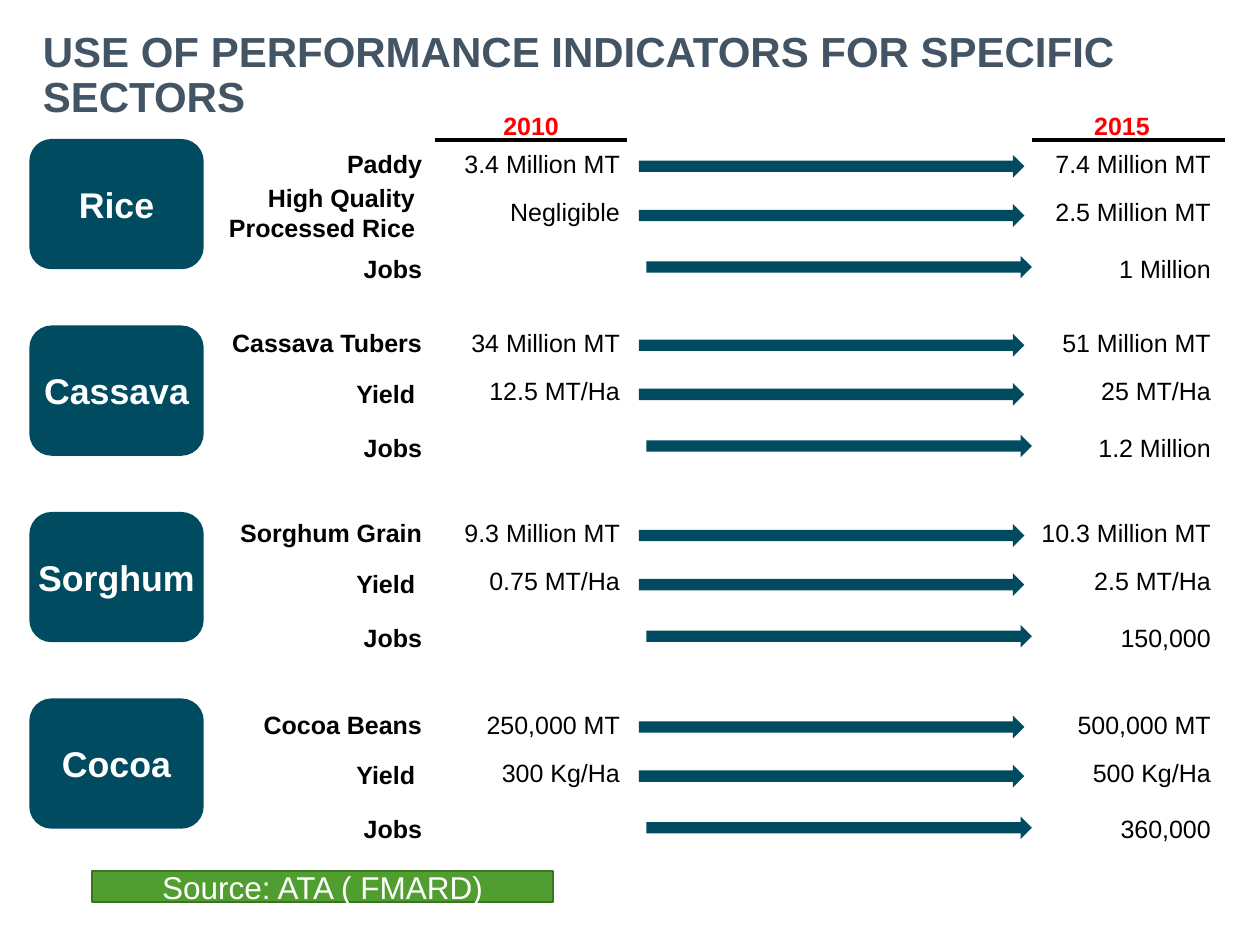
from pptx import Presentation
from pptx.dml.color import RGBColor
from pptx.enum.shapes import MSO_CONNECTOR, MSO_SHAPE
from pptx.enum.text import MSO_ANCHOR, MSO_AUTO_SIZE, PP_ALIGN
from pptx.oxml.xmlchemy import OxmlElement
from pptx.util import Inches, Pt

TEAL, WHITE, BLACK = "004B5F", "FFFFFF", "000000"


def write(shape, text, size, color, bold=False, align=PP_ALIGN.CENTER, inset=None, **form):
    """Put text in a shape; form holds text frame settings."""
    frame = shape.text_frame
    frame.text = text
    if inset is not None:
        for side in ("left", "top", "right", "bottom"):
            setattr(frame, "margin_" + side, Inches(inset))
    for key, val in form.items():
        setattr(frame, key, val)
    look = {"name": "Arial", "size": Pt(size), "bold": bold}
    for para in frame.paragraphs:
        para.alignment = align
        for run in para.runs:
            for key, val in look.items():
                setattr(run.font, key, val)
            run.font.color.rgb = RGBColor.from_string(color)


def draw(kind, left, top, width, height, fill, line=None):
    """Add a filled preset shape without shadow."""
    shape = slide.shapes.add_shape(kind, Inches(left), Inches(top), Inches(width), Inches(height))
    shape.shadow.inherit = False
    shape.fill.solid()
    shape.fill.fore_color.rgb = RGBColor.from_string(fill)
    if line:
        shape.line.color.rgb = RGBColor.from_string(line)
        shape.line.width = Pt(1)
    else:
        shape.line.fill.background()
    return shape


deck = Presentation()
deck.slide_width, deck.slide_height = Inches(10), Inches(7.5)
slide = deck.slides.add_slide(deck.slide_layouts[5])

title = slide.shapes.title
spot = {"left": 0.24, "top": 0.34, "width": 9.78, "height": 0.53}
for key, val in spot.items():
    setattr(title, key, Inches(val))
write(title, "USE OF PERFORMANCE INDICATORS FOR SPECIFIC SECTORS", 24, "435464", True,
      PP_ALIGN.LEFT, vertical_anchor=MSO_ANCHOR.MIDDLE, word_wrap=True,
      auto_size=MSO_AUTO_SIZE.NONE)
title.text_frame.paragraphs[0].line_spacing = 0.9

# Unwrapped frames keep each text centred on its box
fit = {"inset": 0, "word_wrap": False, "auto_size": MSO_AUTO_SIZE.SHAPE_TO_FIT_TEXT}

# Year heads with their rules
for year, left, rule in (("2010", 3.72, 3.45), ("2015", 8.41, 8.19)):
    box = slide.shapes.add_textbox(Inches(left), Inches(0.88), Inches(0.99), Inches(0.25))
    write(box, year, 14.3, "FF0000", True, **fit)
    line = slide.shapes.add_connector(MSO_CONNECTOR.STRAIGHT, Inches(rule), Inches(1.11),
                                      Inches(rule + 1.53), Inches(1.11))
    line.line.color.rgb = RGBColor.from_string(BLACK)
    line.line.width = Pt(2.25)
    line._element.spPr.append(OxmlElement("a:effectLst"))

# Sector, top of its rows, then label, label width, 2010 value, 2015 value
sectors = [
    ("Rice", 1.18, [("Paddy", 0.62, "3.4 Million MT", "7.4 Million MT"),
                    ("High Quality \nProcessed Rice ", 1.67, "Negligible", "2.5 Million MT"),
                    ("Jobs", 0.57, "", "1 Million")]),
    ("Cassava", 2.6, [("Cassava Tubers", 1.73, "34 Million MT", "51 Million MT"),
                      ("Yield ", 0.61, "12.5 MT/Ha", "25 MT/Ha"),
                      ("Jobs", 0.57, "", "1.2 Million")]),
    ("Sorghum", 4.11, [("Sorghum Grain", 1.49, "9.3 Million MT", "10.3 Million MT"),
                       ("Yield ", 0.61, "0.75 MT/Ha", "2.5 MT/Ha"),
                       ("Jobs", 0.57, "", "150,000")]),
    ("Cocoa", 5.63, [("Cocoa Beans", 1.33, "250,000 MT", "500,000 MT"),
                     ("Yield ", 0.61, "300 Kg/Ha", "500 Kg/Ha"),
                     ("Jobs", 0.57, "", "360,000")]),
]
# Per row: drop of label, value and arrow below the top, and arrow left
steps = [(0, 0, 0.05, 5.07), (0.4, 0.38, 0.44, 5.07), (0.83, 0.83, 0.85, 5.13)]

for i, (name, top, rows) in enumerate(sectors):
    card = draw(MSO_SHAPE.ROUNDED_RECTANGLE, 0.24, 1.11 + 1.48 * i, 1.37, 1.02, TEAL, TEAL)
    write(card, name, 20.4, WHITE, True, word_wrap=False, vertical_anchor=MSO_ANCHOR.MIDDLE)
    for (label, wide, old, new), (drop, fall, dip, start) in zip(rows, steps):
        tall = 0.25
        if "\n" in label:
            drop, tall = 0.27, 0.48
        cells = [(label, 3.35 - wide, drop, wide, tall, True),
                 (old, 3.5, fall, 1.42, 0.25, False),
                 (new, 8.19, fall, 1.42, 0.25, False)]
        for text, left, down, width, height, bold in cells:
            if text:
                box = slide.shapes.add_textbox(Inches(left), Inches(top + down),
                                               Inches(width), Inches(height))
                write(box, text, 14.3, BLACK, bold, PP_ALIGN.RIGHT, **fit)
        draw(MSO_SHAPE.RIGHT_ARROW, start, top + dip, 3.06, 0.18, TEAL)

note = draw(MSO_SHAPE.RECTANGLE, 0.73, 6.91, 3.66, 0.25, "509E2F", "3B7523")
write(note, "Source: ATA ( FMARD)", 18, WHITE, vertical_anchor=MSO_ANCHOR.MIDDLE)

deck.save("out.pptx")
